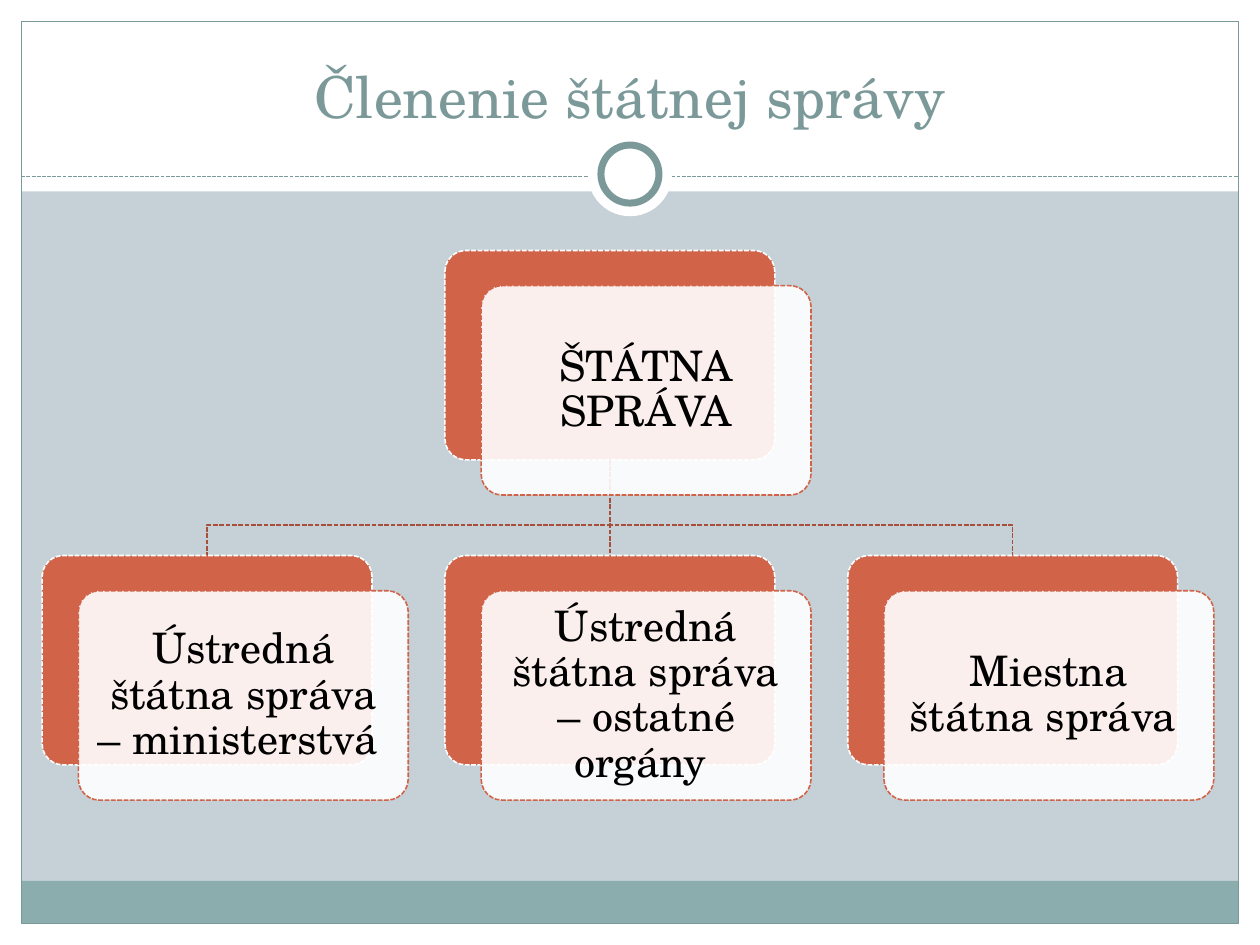
from lxml.etree import SubElement
from pptx import Presentation
from pptx.dml.color import RGBColor
from pptx.enum.dml import MSO_LINE_DASH_STYLE as Dash
from pptx.enum.shapes import MSO_CONNECTOR_TYPE as Connector, MSO_SHAPE as Shape
from pptx.enum.text import MSO_ANCHOR as Anchor, PP_ALIGN as Align
from pptx.oxml.ns import qn
from pptx.util import Cm, Pt

WHITE = RGBColor(0xFF, 0xFF, 0xFF)
BLACK = RGBColor(0x00, 0x00, 0x00)
PALE_BLUE = RGBColor(0xC5, 0xD1, 0xD7)
TEAL = RGBColor(0x8C, 0xAD, 0xAE)
DARK_TEAL = RGBColor(0x7C, 0x99, 0x9A)
ORANGE = RGBColor(0xD1, 0x63, 0x49)
BROWN = RGBColor(0xA7, 0x4F, 0x3A)

FONT = "TeX Gyre Schola"
WIDTH, HEIGHT = Cm(25.4), Cm(19.05)
MARGIN = Cm(0.43)
CARD_WIDTH, CARD_HEIGHT = Cm(6.65), Cm(4.22)
CARD_STEP = Cm(8.12)
SHIFT_X, SHIFT_Y = Cm(0.73), Cm(0.71)


def set_format(target, values):
    for name, value in values.items():
        setattr(target, name, value)


def style_line(line, color, width, dash=None):
    line.color.rgb = color
    set_format(line, {"width": Pt(width), "dash_style": dash})


def add_box(slide, kind, box, fill=None, line=None, opacity=None):
    """Add a preset shape; line holds colour, width and optional dash."""
    shape = slide.shapes.add_shape(kind, *box)
    shape.shadow.inherit = False
    if fill is None:
        shape.fill.background()
    else:
        shape.fill.solid()
        shape.fill.fore_color.rgb = fill
    if opacity is not None:
        color = shape.fill._xPr.find(qn("a:solidFill"))[0]
        SubElement(color, qn("a:alpha"), val=str(opacity * 1000))
    if line is None:
        shape.line.fill.background()
    else:
        style_line(shape.line, *line)
    return shape


def write_text(shape, text, size, color, frame_format, paragraph_format):
    set_format(shape.text_frame, {"word_wrap": True, **frame_format})
    paragraph = shape.text_frame.paragraphs[0]
    set_format(paragraph, {"alignment": Align.CENTER, **paragraph_format})
    run = paragraph.add_run()
    run.text = text
    set_format(run.font, {"name": FONT, "size": Pt(size)})
    run.font.color.rgb = color


def add_frame(slide, left, top, width, height):
    """White border, footer band, outline and the ring on the dashed rule."""
    inner_width = width - 2 * MARGIN
    header_height, footer_height = Cm(3.86), Cm(0.86)
    bottom = top + height - MARGIN
    right = left + width - MARGIN
    for box in ((left, bottom, width, MARGIN),
                (left, top, width, header_height),
                (left, top, MARGIN, height),
                (right, top, MARGIN, height)):
        add_box(slide, Shape.RECTANGLE, box, WHITE)
    add_box(slide, Shape.RECTANGLE,
            (left + MARGIN, bottom - footer_height, inner_width, footer_height), TEAL)
    add_box(slide, Shape.RECTANGLE,
            (left + MARGIN, top + MARGIN, inner_width, height - 2 * MARGIN),
            line=(DARK_TEAL, 0.75))

    # Dashed rule under the title
    rule_y = top + Cm(3.56)
    rule = slide.shapes.add_connector(Connector.STRAIGHT, left + MARGIN, rule_y, right, rule_y)
    style_line(rule.line, DARK_TEAL, 0.75, Dash.SQUARE_DOT)
    SubElement(rule._element.spPr, qn("a:effectLst"))

    # Ring: white disc with an outlined circle in its middle
    center_x, center_y = left + width // 2, top + Cm(3.51)
    for size, line in ((Cm(1.7), None), (Cm(1.17), (DARK_TEAL, 4))):
        add_box(slide, Shape.OVAL,
                (center_x - size // 2, center_y - size // 2, size, size), WHITE, line)


def add_title(slide, text, left, top, width, height):
    title = slide.shapes.add_textbox(left, top, width, height)
    write_text(title, text, 33, DARK_TEAL, {"vertical_anchor": Anchor.BOTTOM}, {})


def add_branch(slide, start_x, start_y, end_x, end_y):
    """Dashed elbow from a parent card down to a child card."""
    bend_y = end_y - Cm(0.62)
    points = [(end_x, end_y)]
    if end_x != start_x:
        points = [(start_x, bend_y), (end_x, bend_y)] + points
    builder = slide.shapes.build_freeform(start_x, start_y)
    builder.add_line_segments(points, close=False)
    branch = builder.convert_to_shape()
    branch.shadow.inherit = False
    branch.fill.background()
    style_line(branch.line, BROWN, 0.9, Dash.SQUARE_DOT)


def add_card(slide, text, left, top, width, height):
    """Orange card with a translucent white card shifted over it."""
    front_left, front_top = left + SHIFT_X, top + SHIFT_Y
    back = add_box(slide, Shape.ROUNDED_RECTANGLE, (left, top, width, height),
                   ORANGE, (WHITE, 0.9, Dash.SQUARE_DOT))
    front = add_box(slide, Shape.ROUNDED_RECTANGLE, (front_left, front_top, width, height),
                    WHITE, (ORANGE, 0.9, Dash.SQUARE_DOT), opacity=90)
    for card in (back, front):
        card.adjustments[0] = 0.1
    inset = Cm(0.12)
    label = slide.shapes.add_textbox(front_left + inset, front_top + inset,
                                     width - 2 * inset, height - 2 * inset)
    margins = {f"margin_{side}": Cm(0.25) for side in ("left", "top", "right", "bottom")}
    write_text(label, text, 24, BLACK,
               {"vertical_anchor": Anchor.MIDDLE, **margins}, {"line_spacing": 0.9})


def add_hierarchy(slide, root, children, left, top):
    """Root card centred over an evenly spaced row of child cards."""
    child_top = top + Cm(6.15)
    lefts = [left + index * CARD_STEP for index in range(len(children))]
    root_left = (lefts[0] + lefts[-1]) // 2
    half = CARD_WIDTH // 2
    for child_left in reversed(lefts):
        add_branch(slide, root_left + half, top + CARD_HEIGHT, child_left + half, child_top)
    add_card(slide, root, root_left, top, CARD_WIDTH, CARD_HEIGHT)
    for text, child_left in zip(children, lefts):
        add_card(slide, text, child_left, child_top, CARD_WIDTH, CARD_HEIGHT)


def main():
    presentation = Presentation()
    set_format(presentation, {"slide_width": WIDTH, "slide_height": HEIGHT})
    slide = presentation.slides.add_slide(presentation.slide_layouts[6])
    slide.background.fill.solid()
    slide.background.fill.fore_color.rgb = PALE_BLUE

    add_frame(slide, 0, 0, WIDTH, HEIGHT)
    add_title(slide, "Členenie štátnej správy", Cm(0.85), Cm(0.64), Cm(23.7), Cm(2.11))
    add_hierarchy(slide, "ŠTÁTNA SPRÁVA",
                  ["Ústredná štátna správa – ministerstvá ",
                   "Ústredná štátna správa – ostatné orgány ",
                   "Miestna štátna správa "],
                  Cm(0.85), Cm(5.05))
    presentation.save("out.pptx")


if __name__ == "__main__":
    main()
